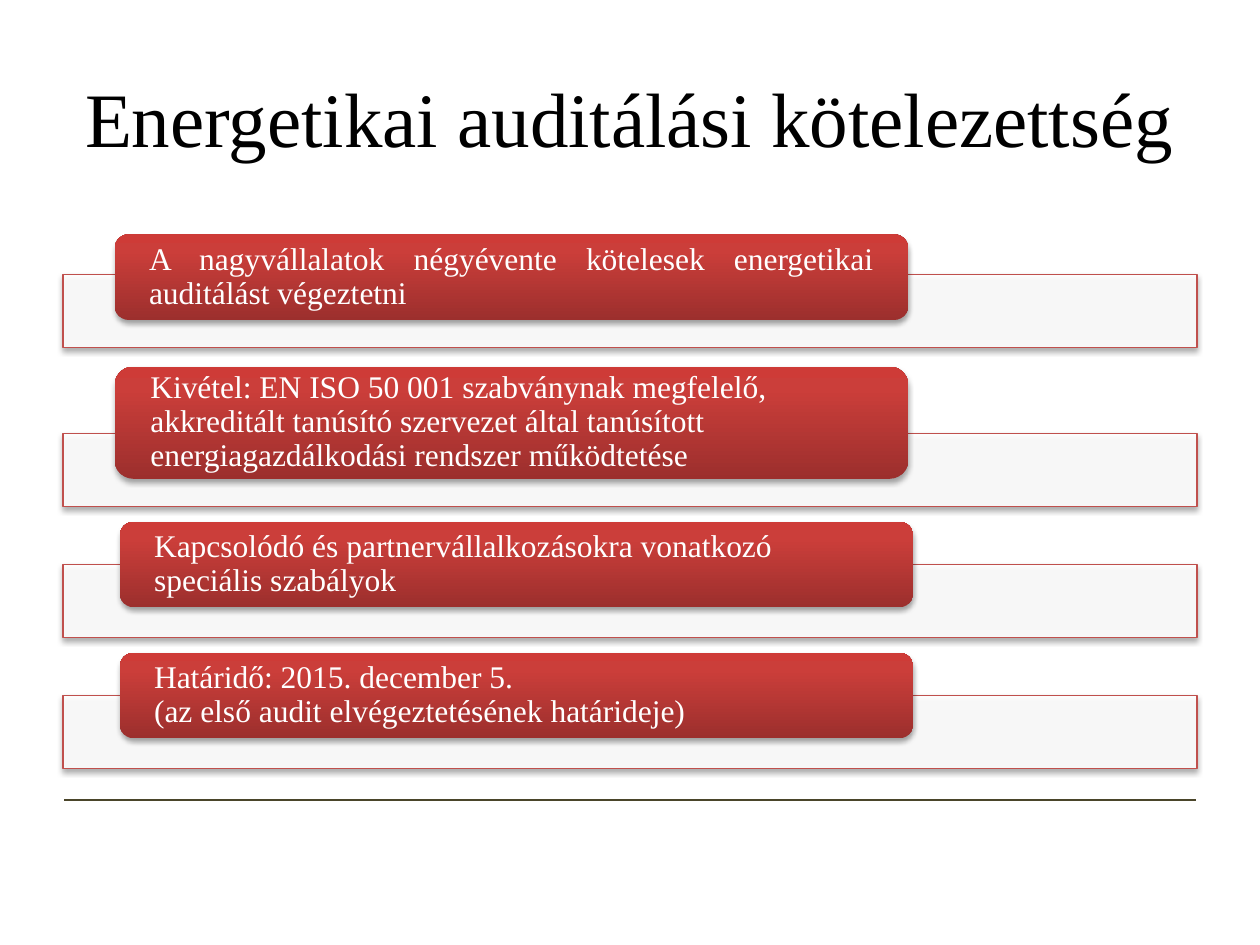
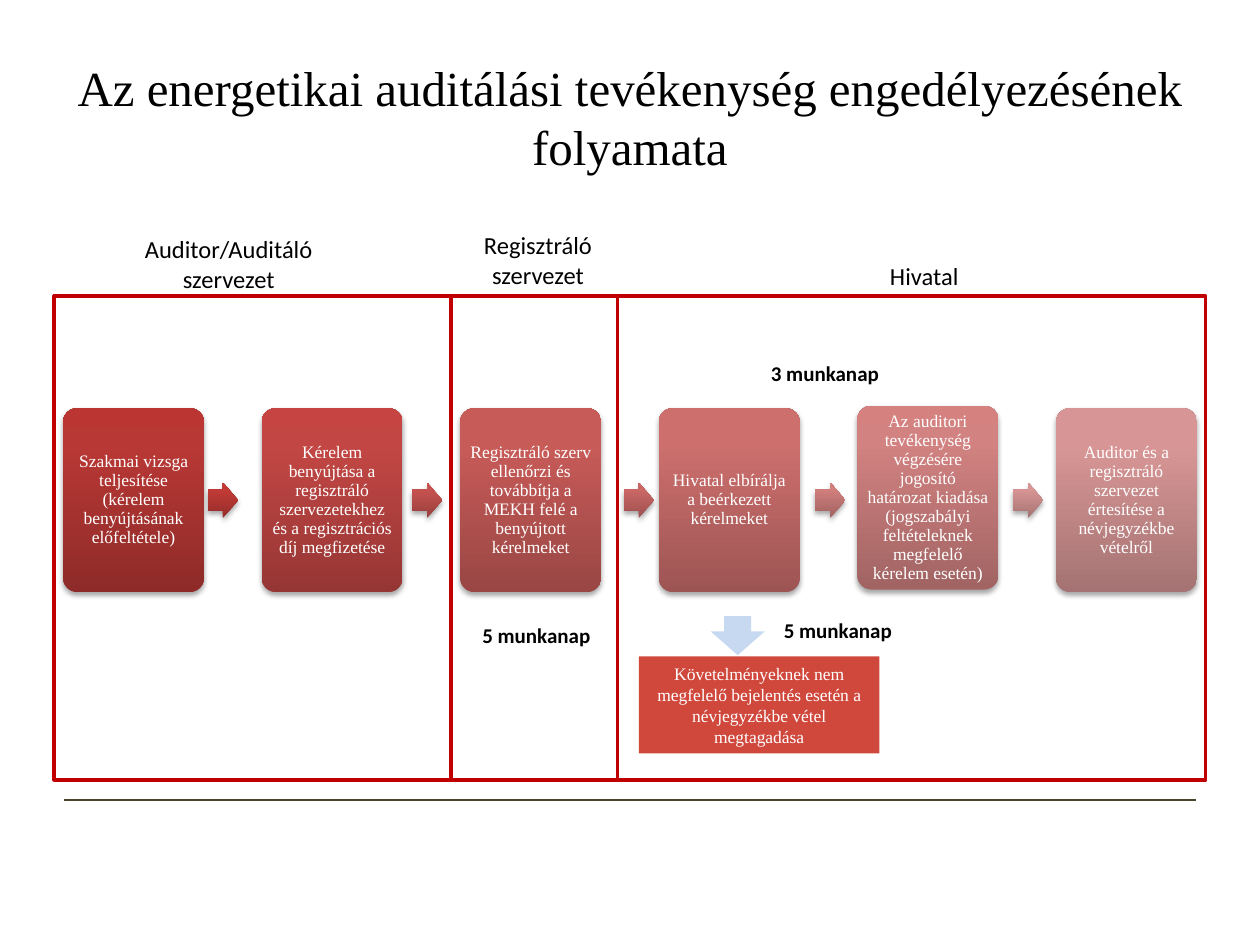
from copy import deepcopy

from lxml import etree
from pptx import Presentation
from pptx.dml.color import RGBColor
from pptx.enum.shapes import MSO_CONNECTOR, MSO_SHAPE
from pptx.enum.text import MSO_ANCHOR, PP_ALIGN
from pptx.oxml.ns import qn
from pptx.util import Inches, Pt

BLACK = RGBColor(0x00, 0x00, 0x00)
WHITE = RGBColor(0xFF, 0xFF, 0xFF)
RULE_BROWN = RGBColor(0x4A, 0x45, 0x2A)
BAR_RED = RGBColor(0xC0, 0x50, 0x4D)
FRAME_RED = RGBColor(0xC0, 0x00, 0x00)
REFUSAL_RED = RGBColor(0xD0, 0x47, 0x3C)
PALE_BLUE = RGBColor(0xC6, 0xD9, 0xF1)

# Gradients run from the bottom edge to the top edge
LABEL_RED = [RGBColor(0x9C, 0x2F, 0x2D), RGBColor(0xCB, 0x3E, 0x3A), RGBColor(0xCE, 0x3B, 0x37)]
STEP_REDS = [
    [RGBColor(0x8E, 0x2B, 0x28), RGBColor(0xB8, 0x38, 0x35), RGBColor(0xBB, 0x36, 0x32)],
    [RGBColor(0x96, 0x36, 0x34), RGBColor(0xC2, 0x47, 0x44), RGBColor(0xC6, 0x45, 0x42)],
    [RGBColor(0x99, 0x46, 0x44), RGBColor(0xC7, 0x5B, 0x58), RGBColor(0xCA, 0x59, 0x57)],
    [RGBColor(0x9D, 0x55, 0x54), RGBColor(0xCC, 0x6F, 0x6D), RGBColor(0xCF, 0x6D, 0x6B)],
    [RGBColor(0xA1, 0x64, 0x63), RGBColor(0xD1, 0x82, 0x81), RGBColor(0xD4, 0x81, 0x80)],
    [RGBColor(0xA5, 0x73, 0x73), RGBColor(0xD7, 0x96, 0x95), RGBColor(0xD9, 0x95, 0x94)],
]
ARROW_REDS = [
    [RGBColor(0x95, 0x2D, 0x2B), RGBColor(0xC2, 0x3B, 0x37), RGBColor(0xC5, 0x39, 0x35)],
    [RGBColor(0x99, 0x3F, 0x3D), RGBColor(0xC6, 0x52, 0x4F), RGBColor(0xCA, 0x50, 0x4D)],
    [RGBColor(0x9D, 0x50, 0x4F), RGBColor(0xCB, 0x68, 0x66), RGBColor(0xCE, 0x67, 0x65)],
    [RGBColor(0xA1, 0x62, 0x60), RGBColor(0xD1, 0x7F, 0x7D), RGBColor(0xD4, 0x7E, 0x7C)],
    [RGBColor(0xA5, 0x73, 0x72), RGBColor(0xD7, 0x95, 0x94), RGBColor(0xD9, 0x94, 0x93)],
]

SERIF, SANS = "Times New Roman", "Calibri"

deck = Presentation()
deck.slide_width, deck.slide_height = Inches(10), Inches(7.5)

# Grid: 100 columns by 75 rows
COL, ROW = deck.slide_width / 100, deck.slide_height / 75
MARGIN, CONTENT = 5, 90


def draw(slide, kind, left, top, width, height, fill=None, alpha=None,
         line=None, weight=0.75, shadow=False, adjust=()):
    """Add a preset shape, or a text box when kind is None, placed on the grid."""
    place = [int(n) for n in (left * COL, top * ROW, width * COL, height * ROW)]
    if kind is None:
        return slide.shapes.add_textbox(*place)
    shape = slide.shapes.add_shape(kind, *place)
    for index, value in enumerate(adjust):
        shape.adjustments[index] = value
    if fill is None:
        shape.fill.background()
    elif isinstance(fill, list):
        shape.fill.gradient()
        shape.fill.gradient_angle = 90
        stops = shape._element.spPr.find(".//" + qn("a:gsLst"))
        stops.append(deepcopy(stops[-1]))
        for stop, color, position in zip(shape.fill.gradient_stops, fill, (0, 0.8, 1)):
            stop.color.rgb, stop.position = color, position
    else:
        shape.fill.solid()
        shape.fill.fore_color.rgb = fill
    if alpha:
        color = shape._element.spPr.find(qn("a:solidFill"))[0]
        etree.SubElement(color, qn("a:alpha"), val=str(alpha * 1000))
    if line is None:
        shape.line.fill.background()
    else:
        shape.line.color.rgb, shape.line.width = line, Pt(weight)
    shape.shadow.inherit = False
    if shadow:
        effects = shape._element.spPr.find(qn("a:effectLst"))
        outer = etree.SubElement(effects, qn("a:outerShdw"), blurRad=str(Pt(3.1)),
                                 dist=str(Pt(1.8)), dir="5400000", rotWithShape="0")
        tint = etree.SubElement(outer, qn("a:srgbClr"), val="000000")
        etree.SubElement(tint, qn("a:alpha"), val="35000")
    return shape


def write(shape, text, size=10, font=SERIF, color=WHITE, bold=False, align=PP_ALIGN.CENTER,
          anchor=MSO_ANCHOR.MIDDLE, spacing=None, inset=(0.1, 0.05)):
    """Set and format the text of a shape; inset is (sides, top and bottom) in inches."""
    frame = shape.text_frame
    frame.word_wrap = True
    frame.vertical_anchor = anchor
    frame.margin_left = frame.margin_right = Inches(inset[0])
    frame.margin_top = frame.margin_bottom = Inches(inset[1])
    paragraph = frame.paragraphs[0]
    paragraph.text = text
    paragraph.alignment = align
    if spacing:
        paragraph.line_spacing = spacing
    for run in paragraph.runs:
        run.font.name, run.font.size, run.font.bold = font, Pt(size), bold
        run.font.color.rgb = color


# Shared frame: title and footer rule
title_only = deck.slide_layouts[5]
slides = []
for heading, heading_size in [
    ("Energetikai auditálási kötelezettség", 44),
    ("Az energetikai auditálási tevékenység engedélyezésének folyamata", 28),
]:
    slide = deck.slides.add_slide(title_only)
    title = slide.shapes.title
    title.left, title.top = int(MARGIN * COL), int(3 * ROW)
    title.width, title.height = int(CONTENT * COL), int(12.5 * ROW)
    write(title, heading, size=heading_size, color=BLACK)
    rule = slide.shapes.add_connector(MSO_CONNECTOR.STRAIGHT, int(5.1 * COL), int(63.5 * ROW),
                                      int(94.9 * COL), int(63.5 * ROW))
    rule.line.color.rgb, rule.line.width = RULE_BROWN, Pt(0.75)
    etree.SubElement(rule._element.spPr, qn("a:effectLst"))
    slides.append(slide)
obligation, process = slides

# Slide 1: each obligation is a red label over a pale bar
obligations = [
    # bar top, label left, label top, label height, alignment, text
    (21.8, 9.1, 18.6, 6.8, PP_ALIGN.JUSTIFY,
     "A nagyvállalatok négyévente kötelesek energetikai auditálást végeztetni"),
    (34.4, 9.1, 29.1, 8.9, PP_ALIGN.LEFT,
     "Kivétel: EN ISO 50 001 szabványnak megfelelő, akkreditált tanúsító szervezet "
     "által tanúsított energiagazdálkodási rendszer működtetése"),
    (44.8, 9.5, 41.4, 6.8, PP_ALIGN.LEFT,
     "Kapcsolódó és partnervállalkozásokra vonatkozó speciális szabályok"),
    (55.2, 9.5, 51.8, 6.8, PP_ALIGN.LEFT,
     "Határidő: 2015. december 5.\v(az első audit elvégeztetésének határideje)"),
]
for bar_top, label_left, label_top, label_height, align, text in obligations:
    draw(obligation, MSO_SHAPE.RECTANGLE, MARGIN, bar_top, CONTENT, 5.8,
         fill=WHITE, alpha=90, line=BAR_RED, shadow=True)
    label = draw(obligation, MSO_SHAPE.ROUNDED_RECTANGLE, label_left, label_top, 63, label_height,
                 fill=LABEL_RED, shadow=True)
    write(label, text, size=18, align=align, spacing=0.9, inset=(0.24, 0))

# Slide 2: six steps in a row
STEP_WIDTH, STEP_HEIGHT = 11.2, 14.6
steps = [
    (32.4, "Szakmai vizsga teljesítése (kérelem benyújtásának előfeltétele)"),
    (32.4, "Kérelem benyújtása a regisztráló szervezetekhez és a regisztrációs díj megfizetése"),
    (32.4, "Regisztráló szerv ellenőrzi és továbbítja a MEKH felé a benyújtott kérelmeket"),
    (32.4, "Hivatal elbírálja a beérkezett kérelmeket"),
    (32.2, "Az auditori tevékenység végzésére jogosító határozat kiadása "
           "(jogszabályi feltételeknek megfelelő kérelem esetén)"),
    (32.4, "Auditor és a regisztráló szervezet értesítése a névjegyzékbe vételről"),
]
step_pitch = (CONTENT - STEP_WIDTH) / (len(steps) - 1)
for index, (top, text) in enumerate(steps):
    step = draw(process, MSO_SHAPE.ROUNDED_RECTANGLE, MARGIN + index * step_pitch, top,
                STEP_WIDTH, STEP_HEIGHT, fill=STEP_REDS[index], shadow=True, adjust=[0.1])
    write(step, text, spacing=0.9, inset=(0.04, 0.04))

# Arrows between the steps
for left, reds in zip((16.5, 32.7, 49.5, 64.7, 80.4), ARROW_REDS):
    draw(process, MSO_SHAPE.RIGHT_ARROW, left, 38.3, 2.4, 2.8,
         fill=reds, shadow=True, adjust=[0.6, 0.5])

# Refusal branch below the decision step
draw(process, MSO_SHAPE.DOWN_ARROW, 56.4, 48.9, 4.3, 3.1, fill=PALE_BLUE, adjust=[0.5, 0.61])
refusal = draw(process, MSO_SHAPE.RECTANGLE, 50.7, 52.1, 19.1, 7.7, fill=REFUSAL_RED)
write(refusal, "Követelményeknek nem megfelelő bejelentés esetén a névjegyzékbe vétel megtagadása",
      anchor=MSO_ANCHOR.TOP)

# Deadlines
for left, top, width, align, text in [
    (37.3, 48.9, 13.4, PP_ALIGN.LEFT, "5 munkanap"),
    (60.2, 28.1, 13.4, PP_ALIGN.LEFT, "3 munkanap"),
    (59.6, 48.5, 13.8, PP_ALIGN.CENTER, "5 munkanap"),
]:
    write(draw(process, None, left, top, width, 3), text, size=12, font=SANS, color=BLACK,
          bold=True, align=align, anchor=MSO_ANCHOR.TOP)

# Frames of the three responsible parties, with their names above
frame_edges = [4.3, 35.8, 49, 95.7]
parties = [
    (8.7, 18.1, 18.9, 5.7, "Auditor/Auditáló szervezet"),
    (35.7, 17.8, 14, 5.7, "Regisztráló szervezet"),
    (63.9, 20.2, 18.9, 3.4, "Hivatal"),
]
for start, end, (left, top, width, height, text) in zip(frame_edges, frame_edges[1:], parties):
    draw(process, MSO_SHAPE.RECTANGLE, start, 23.5, end - start, 38.4, line=FRAME_RED, weight=2)
    write(draw(process, None, left, top, width, height), text, size=14, font=SANS, color=BLACK,
          anchor=MSO_ANCHOR.TOP)

deck.save("out.pptx")
